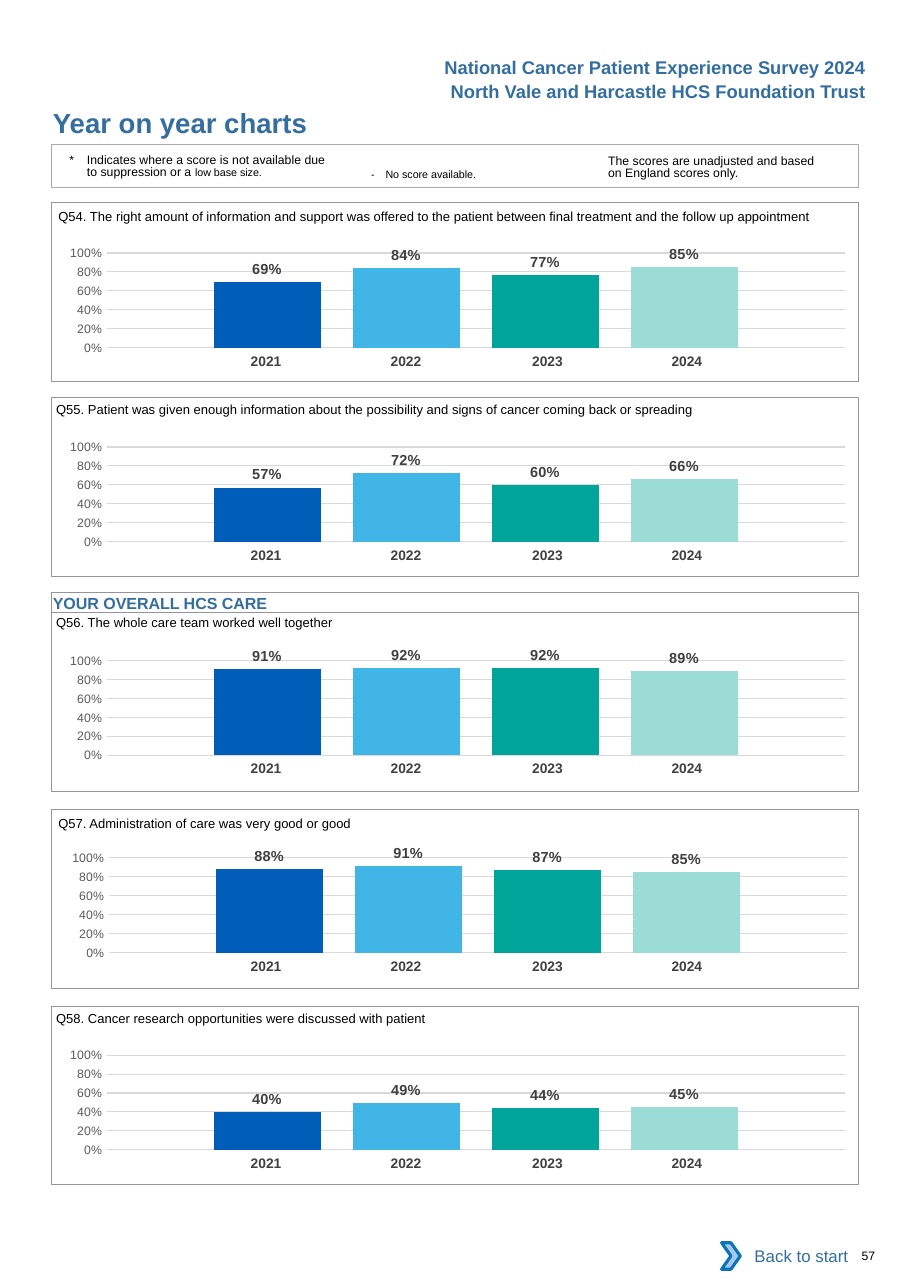
from lxml.etree import SubElement
from pptx import Presentation
from pptx.chart.data import CategoryChartData
from pptx.dml.color import RGBColor
from pptx.enum.chart import XL_CHART_TYPE, XL_LABEL_POSITION, XL_TICK_MARK
from pptx.enum.shapes import MSO_SHAPE
from pptx.enum.text import MSO_ANCHOR, PP_ALIGN
from pptx.oxml.ns import qn
from pptx.util import Inches, Pt

BLUE, GREY, BLACK = "336E9F", "939598", "000000"
YEARS = {"2021": "005EB8", "2022": "41B6E6", "2023": "00A499", "2024": "9CDCD7"}
YEAR_WIDTHS = [1.27, 1.27, 1.34, 1.27]
YEAR_RIGHT_INSETS = [0, 0, 0.04, 0.12]
LEFT, WIDTH, PANEL_HEIGHT = 0.47, 7.32, 1.62

# Panel top, chart left, chart top, question left, question top, question, scores
QUESTIONS = [
    (1.84, 0.39, 2.11, 0.53, 1.89,
     "Q54. The right amount of information and support was offered to the patient "
     "between final treatment and the follow up appointment", [0.69, 0.84, 0.77, 0.85]),
    (3.61, 0.39, 3.87, 0.51, 3.64,
     "Q55. Patient was given enough information about the possibility and signs of "
     "cancer coming back or spreading", [0.57, 0.72, 0.60, 0.66]),
    (5.56, 0.39, 5.81, 0.51, 5.58,
     "Q56. The whole care team worked well together", [0.91, 0.92, 0.92, 0.89]),
    (7.35, 0.41, 7.60, 0.53, 7.40,
     "Q57. Administration of care was very good or good", [0.88, 0.91, 0.87, 0.85]),
    (9.13, 0.39, 9.39, 0.51, 9.17,
     "Q58. Cancer research opportunities were discussed with patient",
     [0.40, 0.49, 0.44, 0.45]),
]


def rgb(value):
    return RGBColor.from_string(value)


def style(font, size, color, bold=False, name="Arial"):
    font.name, font.size, font.bold = name, Pt(size), bold
    font.color.rgb = rgb(color)


def set_text(tf, text, size, color, bold=False, align=PP_ALIGN.LEFT, anchor=MSO_ANCHOR.TOP):
    tf.word_wrap = True
    tf.vertical_anchor = anchor
    tf.margin_left = tf.margin_right = tf.margin_top = tf.margin_bottom = 0
    p = tf.paragraphs[0]
    p.text = text
    p.alignment = align
    for r in p.runs:
        style(r.font, size, color, bold)
    return p


def add_text(s, box, text, size, color=BLACK, **options):
    tb = s.shapes.add_textbox(*map(Inches, box))
    return set_text(tb.text_frame, text, size, color, **options)


def add_box(s, box, fill=None, line=None, weight=0.5, kind=MSO_SHAPE.RECTANGLE):
    sp = s.shapes.add_shape(kind, *map(Inches, box))
    sp.shadow.inherit = False
    if fill:
        sp.fill.solid()
        sp.fill.fore_color.rgb = rgb(fill)
    else:
        sp.fill.background()
    if line:
        sp.line.color.rgb = rgb(line)
        sp.line.width = Pt(weight)
    else:
        sp.line.fill.background()
    return sp


def hang(p, indent):
    pPr = p._p.get_or_add_pPr()
    pPr.set("marL", str(Inches(indent)))
    pPr.set("indent", str(-Inches(indent)))


def add_years(s, top):
    box = (1.73, top, sum(YEAR_WIDTHS), 0.27)
    table = s.shapes.add_table(1, len(YEARS), *map(Inches, box)).table
    table.first_row = table.horz_banding = False
    for i, year in enumerate(YEARS):
        table.columns[i].width = Inches(YEAR_WIDTHS[i])
        cell = table.cell(0, i)
        cell.fill.background()
        set_text(cell.text_frame, year, 9, "414042", True, PP_ALIGN.CENTER)
        cell.margin_left = Inches(0.1)
        cell.margin_right = Inches(YEAR_RIGHT_INSETS[i])
        cell.margin_top = cell.margin_bottom = Inches(0.05)


def set_plot_layout(chart, **position):
    area = chart.element.find(".//" + qn("c:plotArea"))
    for old in area.findall(qn("c:layout")):
        area.remove(old)
    layout = SubElement(area, qn("c:layout"))
    area.insert(0, layout)
    manual = SubElement(layout, qn("c:manualLayout"))
    settings = dict(layoutTarget="inner", xMode="edge", yMode="edge", **position)
    for tag, value in settings.items():
        SubElement(manual, qn("c:" + tag)).set("val", str(value))


def add_score_chart(s, left, top, scores):
    data = CategoryChartData(number_format="0%")
    data.categories = ["1"]
    for i, score in enumerate(scores, 1):
        data.add_series(f"Series {i}", [score])
    box = (left, top, WIDTH, 1.29)
    chart = s.shapes.add_chart(
        XL_CHART_TYPE.COLUMN_CLUSTERED, *map(Inches, box), data).chart
    style(chart.font, 10, BLACK, name="Calibri")
    chart.has_legend = chart.has_title = False
    set_plot_layout(chart, x=0.079, y=0.145, w=0.915, h=0.666)

    # Axes
    chart.category_axis.visible = False
    axis = chart.value_axis
    axis.minimum_scale, axis.maximum_scale, axis.major_unit = 0, 1, 0.2
    axis.major_tick_mark = axis.minor_tick_mark = XL_TICK_MARK.NONE
    axis.format.line.fill.background()
    grid = axis.major_gridlines.format.line
    grid.color.rgb = rgb("D9D9D9")
    grid.width = Pt(0.75)
    axis.tick_labels.number_format = "0%"
    axis.tick_labels.number_format_is_linked = False
    style(axis.tick_labels.font, 8, "595959")

    # Bars and their labels
    plot = chart.plots[0]
    plot.vary_by_categories = False
    plot.gap_width, plot.overlap = 200, -30
    for series, color in zip(plot.series, YEARS.values()):
        series.format.fill.solid()
        series.format.fill.fore_color.rgb = rgb(color)
        labels = series.data_labels
        labels.show_value = True
        labels.position = XL_LABEL_POSITION.OUTSIDE_END
        labels.number_format = "0%"
        labels.number_format_is_linked = False
        style(labels.font, 9.5, "404040", True)


def add_panel(s, top, chart_left, chart_top, text_left, text_top, question, scores):
    add_years(s, chart_top + 1.05)
    add_score_chart(s, chart_left, chart_top, scores)
    add_box(s, (LEFT, top, WIDTH, PANEL_HEIGHT), line=GREY)
    add_text(s, (text_left, text_top, 7.2, 0.15), question, 8.5)


def add_key(s):
    add_box(s, (LEFT, 1.31, WIDTH, 0.39), line="A9AAAD", weight=0.75)
    suppressed = add_text(
        s, (0.63, 1.4, 2.6, 0.25),
        "*\tIndicates where a score is not available due\vto suppression or a ", 8)
    r = suppressed.add_run()
    r.text = "low base size."
    style(r.font, 7, BLACK)
    hang(suppressed, 0.16)
    missing = add_text(s, (3.37, 1.52, 1.6, 0.14), "-\tNo score available.", 7)
    hang(missing, 0.13)
    unadjusted = add_text(
        s, (5.52, 1.41, 2.01, 0.25),
        "The scores are unadjusted and based\von England scores only.", 8)
    for p in (suppressed, unadjusted):
        p.line_spacing = Pt(8.1)


def main():
    prs = Presentation()
    prs.slide_width, prs.slide_height = Inches(8.26), Inches(11.69)
    s = prs.slides.add_slide(prs.slide_layouts[5])

    # Title and header
    title = s.shapes.title
    title.left, title.top, title.width, title.height = map(Inches, (0.48, 0.96, 4.5, 0.3))
    set_text(title.text_frame, "Year on year charts", 18, BLUE, True)
    headers = ["National Cancer Patient Experience Survey 2024",
               "North Vale and Harcastle HCS Foundation Trust"]
    for i, header in enumerate(headers):
        add_text(s, (3.4, 0.51 + 0.22 * i, 4.46, 0.2), header, 12, BLUE,
                 bold=True, align=PP_ALIGN.RIGHT)

    # Key and question panels
    add_key(s)
    for question in QUESTIONS:
        add_panel(s, *question)
    section = add_box(s, (LEFT, 5.38, WIDTH, 0.18), line=GREY)
    set_text(section.text_frame, "YOUR OVERALL HCS CARE", 10.5, BLUE, True)
    section.text_frame.margin_left = section.text_frame.margin_top = Inches(0.01)

    # Footer
    add_text(s, (6.72, 11.3, 0.98, 0.2), "Back to start", 11, BLUE,
             align=PP_ALIGN.RIGHT, anchor=MSO_ANCHOR.MIDDLE)
    add_box(s, (6.55, 11.28, 0.17, 0.24), "A8C7E9", "0A74BB", 2, MSO_SHAPE.CHEVRON)
    add_text(s, (7.82, 11.33, 0.4, 0.13), "57", 8)

    prs.save("out.pptx")


if __name__ == "__main__":
    main()
